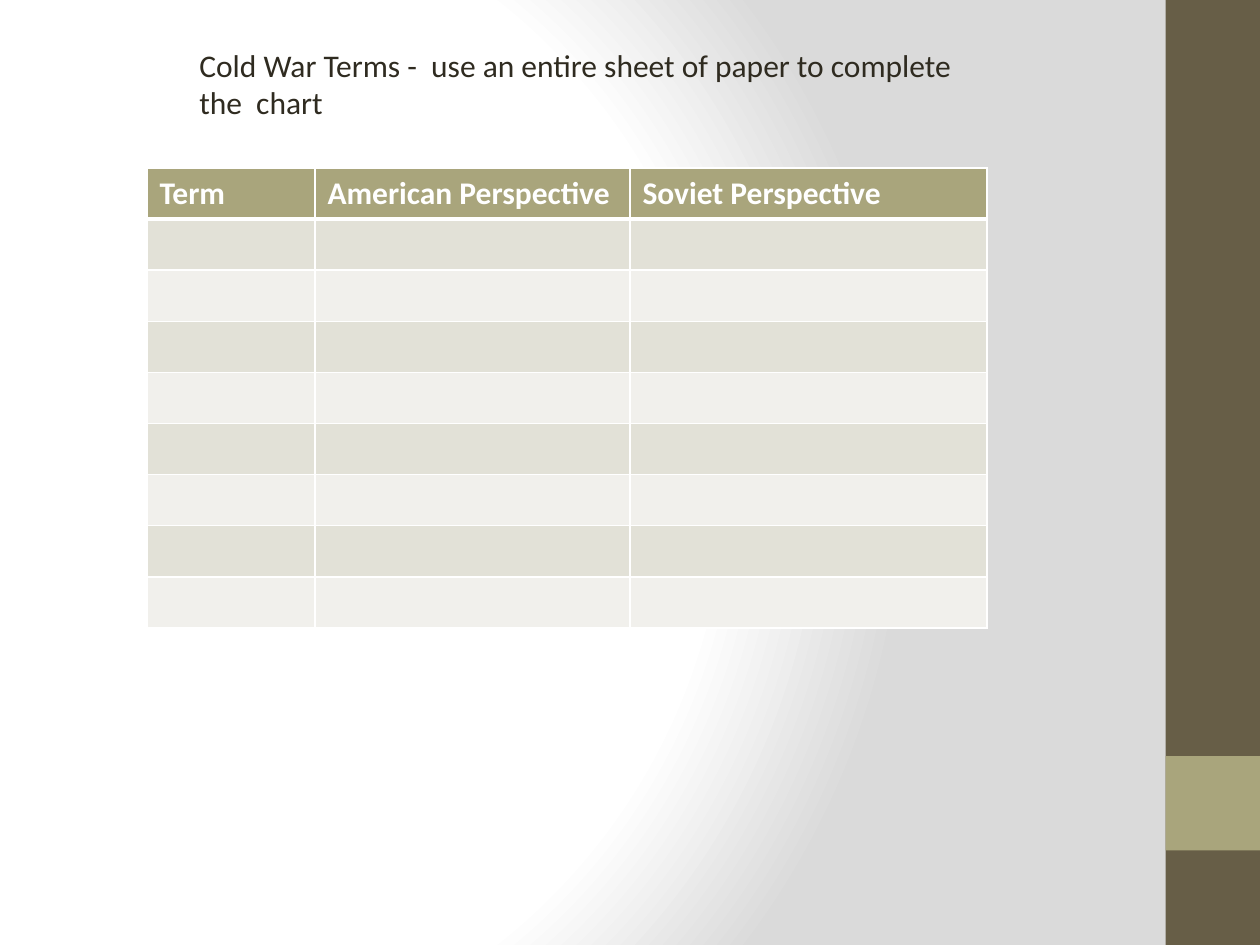
from lxml.etree import SubElement
from pptx import Presentation
from pptx.dml.color import RGBColor
from pptx.enum.shapes import MSO_SHAPE
from pptx.oxml.ns import qn
from pptx.util import Pt

WHITE, OLIVE, BROWN, INK = "FFFFFF", "A9A57C", "675E47", "2F2B20"
BANDS = ("E2E1D7", "F1F0EC")
HEADERS = ("Term", "American Perspective", "Soviet Perspective")
COLUMN_WIDTHS = (96, 180, 204)
BODY_ROWS = 8
ROW_HEIGHT = 29.2


def color(value):
    """Turn a hex string into a color."""
    return RGBColor.from_string(value)


def add_element(parent, tag, **attributes):
    """Append a drawing element with its attributes."""
    return SubElement(parent, qn(tag), {key: str(value) for key, value in attributes.items()})


def set_background(page):
    """Fill the page with a circular gradient from white to gray."""
    page.background.fill.gradient()
    gradient = page.element.find(".//" + qn("a:gradFill"))
    for child in list(gradient):
        gradient.remove(child)
    stops = add_element(gradient, "a:gsLst")
    for position, value in ((0, WHITE), (75, WHITE), (100, "DADADA")):
        stop = add_element(stops, "a:gs", pos=position * 1000)
        add_element(stop, "a:srgbClr", val=value)
    circle = add_element(gradient, "a:path", path="circle")
    add_element(circle, "a:fillToRect", l=20000, t=50000, r=100000, b=50000)


def add_block(page, left, top, width, height, fill):
    """Add a plain rectangle without outline."""
    block = page.shapes.add_shape(MSO_SHAPE.RECTANGLE, Pt(left), Pt(top), Pt(width), Pt(height))
    block.shadow.inherit = False
    block.fill.solid()
    block.fill.fore_color.rgb = color(fill)
    block.line.fill.background()


def write(para, text, fill, bold=False):
    """Write one formatted span into a paragraph."""
    span = para.add_run()
    span.text = text
    for name, value in {"name": "Calibri", "size": Pt(18), "bold": bold}.items():
        setattr(span.font, name, value)
    span.font.color.rgb = color(fill)


def add_text(page, left, top, width, height, lines):
    """Add an unwrapped text box with one paragraph per line."""
    box = page.shapes.add_textbox(Pt(left), Pt(top), Pt(width), Pt(height))
    frame = box.text_frame
    frame.word_wrap = False
    for index, line in enumerate(lines):
        para = frame.add_paragraph() if index else frame.paragraphs[0]
        write(para, line, INK)


def set_borders(cell, top, bottom):
    """Draw white cell borders, with top and bottom widths in points."""
    properties = cell._tc.get_or_add_tcPr()
    for side, width in {"L": 1, "R": 1, "T": top, "B": bottom}.items():
        line = add_element(properties, "a:ln" + side, w=Pt(width))
        add_element(add_element(line, "a:solidFill"), "a:srgbClr", val=WHITE)


def add_terms_table(page, left, top):
    """Add the chart with its header row and empty banded rows."""
    rows = BODY_ROWS + 1
    table = page.shapes.add_table(
        rows, len(HEADERS), Pt(left), Pt(top), Pt(sum(COLUMN_WIDTHS)), Pt(rows * ROW_HEIGHT)
    ).table
    for column, width in zip(table.columns, COLUMN_WIDTHS):
        column.width = Pt(width)
    for index, row in enumerate(table.rows):
        row.height = Pt(ROW_HEIGHT)
        for cell, header in zip(row.cells, HEADERS):
            set_borders(cell, 3 if index == 1 else 1, 3 if index == 0 else 1)
            cell.fill.solid()
            cell.fill.fore_color.rgb = color(BANDS[(index - 1) % 2] if index else OLIVE)
            if index == 0:
                write(cell.text_frame.paragraphs[0], header, WHITE, bold=True)


def main():
    """Build the slide and save the deck."""
    deck = Presentation()
    deck.slide_width, deck.slide_height = Pt(720), Pt(540)
    page = deck.slides.add_slide(deck.slide_layouts[6])
    set_background(page)
    add_block(page, 666, 0, 54, 540, BROWN)
    add_block(page, 666, 432, 54, 54, OLIVE)
    add_terms_table(page, 84, 96)
    add_text(page, 106.8, 22.5, 447.8, 50.9, (
        "Cold War Terms -  use an entire sheet of paper to complete",
        "the  chart",
    ))
    deck.save("out.pptx")


if __name__ == "__main__":
    main()
